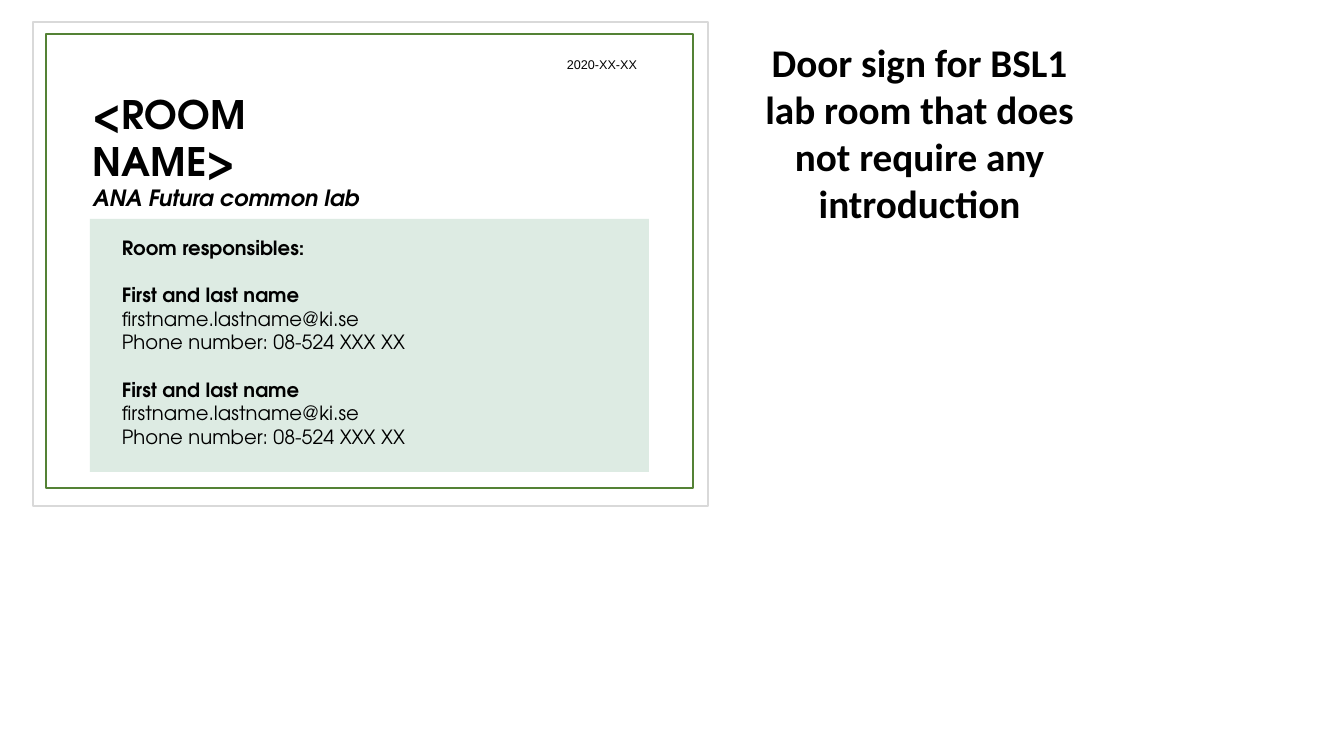
from pptx import Presentation
from pptx.dml.color import RGBColor
from pptx.enum.shapes import MSO_SHAPE
from pptx.enum.text import MSO_ANCHOR, MSO_AUTO_SIZE, PP_ALIGN
from pptx.util import Emu, Pt

SCALE = 914400 / 100.8
COLORS = {"black": "000000", "white": "FFFFFF", "gray": "D9D9D9",
          "green": "548235", "mint": "DDEBE3"}
SANS = "TeX Gyre Adventor"


def px(*sizes):
    return [Emu(round(size * SCALE)) for size in sizes]


def write(box, paras, align=PP_ALIGN.LEFT, gap=0):
    """Fill box with paragraphs, each a list of (text, font format) lines."""
    frame = box.text_frame
    frame.word_wrap = True
    frame.auto_size = MSO_AUTO_SIZE.SHAPE_TO_FIT_TEXT
    frame.vertical_anchor = MSO_ANCHOR.TOP
    for i, lines in enumerate(paras):
        para = frame.add_paragraph() if i else frame.paragraphs[0]
        para.alignment = align
        para.space_before = Pt(gap if i else 0)
        for j, (text, style) in enumerate(lines):
            if j:
                para.add_line_break()
            run = para.add_run()
            run.text = text
            for key, value in style.items():
                setattr(run.font, key, value)
            run.font.color.rgb = RGBColor.from_string(COLORS["black"])


deck = Presentation()
deck.slide_width, deck.slide_height = px(1344, 756)
slide = deck.slides.add_slide(deck.slide_layouts[5])
shapes = slide.shapes

# Card, border and contact panel
for area, fill, line in [
    ((33, 22, 675, 484), "white", "gray"),
    ((46, 34, 647, 454), None, "green"),
    ((90, 219, 559, 253), "mint", None),
]:
    rect = shapes.add_shape(MSO_SHAPE.RECTANGLE, *px(*area))
    rect.shadow.inherit = False
    if fill:
        rect.fill.solid()
        rect.fill.fore_color.rgb = RGBColor.from_string(COLORS[fill])
    else:
        rect.fill.background()
    if line:
        rect.line.color.rgb = RGBColor.from_string(COLORS[line])
        rect.line.width = Pt(1)
    else:
        rect.line.fill.background()

# Heading beside the card
title = shapes.title
title.left, title.top, title.width, title.height = px(745, 33, 349, 200)
head = {"name": "Calibri", "size": Pt(28), "bold": True}
write(title, [
    [("Door sign for BSL1 lab room that does not require any", head)],
    [("introduction", head)],
], PP_ALIGN.CENTER)

# Text on the card
room = {"name": SANS, "size": Pt(28), "bold": True}
lab = {"name": SANS, "size": Pt(16), "bold": True, "italic": True}
bold = {"name": SANS, "size": Pt(14), "bold": True}
plain = {"name": SANS, "size": Pt(14), "bold": False}
date = {"name": "Arial", "size": Pt(9)}
person = [("First and last name", bold),
          ("firstname.lastname@ki.se", plain),
          ("Phone number: 08-524 XXX XX", plain)]

for area, paras, gap in [
    ((83, 85, 318, 128), [[("<ROOM NAME>", room), ("ANA Futura common lab", lab)]], 0),
    ((112, 231, 402, 224), [[("Room responsibles:", bold)], person, person], 17),
    ((557, 52, 91, 25), [[("2020-XX-XX", date)]], 0),
]:
    write(shapes.add_textbox(*px(*area)), paras, gap=gap)

deck.save("out.pptx")
